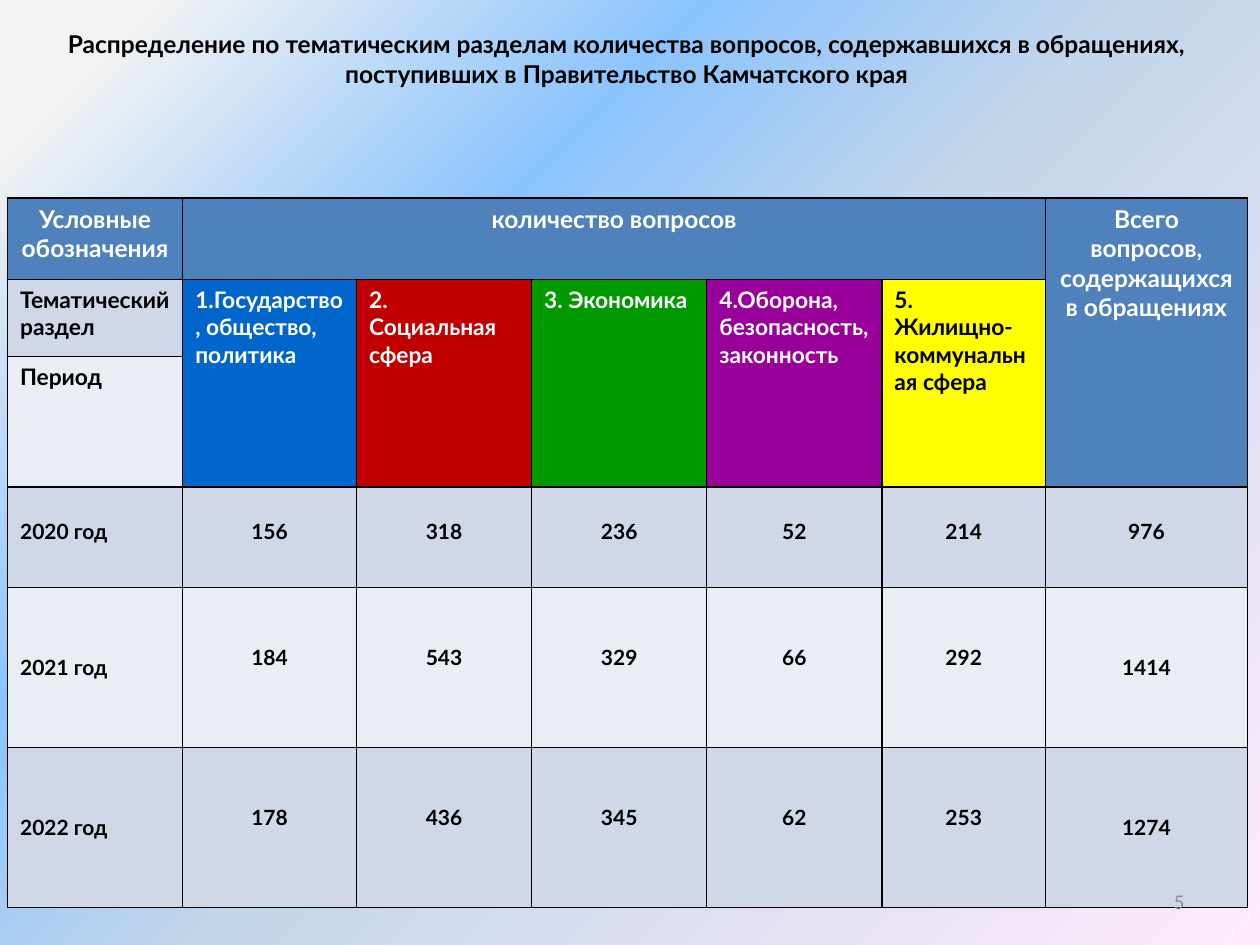
import copy
import pptx
import pptx.dml.color
import pptx.enum.text
import pptx.oxml
import pptx.oxml.ns
import pptx.util
from pptx.util import Inches

ALIGN = pptx.enum.text.PP_ALIGN
ANCHOR = pptx.enum.text.MSO_ANCHOR
COLORS = {
    "black": "000000", "white": "FFFFFF", "number": "8C8C8C",
    "header": "4F81BD", "band": "D0D8E8", "light": "E9EDF4",
    "state": "0066CC", "social": "C00000", "economy": "009900",
    "defence": "990099", "housing": "FFFF00",
}
BACKGROUND_STOPS = [(7, "F2F2F2"), (32, "8BC4FD"), (52, "C4D6EB"), (100, "FFEBFA")]


def write_text(frame, text, size=12, font="Lato", color="black", bold=True,
               align=ALIGN.LEFT, anchor=ANCHOR.TOP):
    frame.word_wrap = True
    frame.vertical_anchor = anchor
    paragraph = frame.paragraphs[0]
    paragraph.alignment = align
    run = paragraph.add_run()
    run.text = text
    run.font.size = pptx.util.Pt(size)
    run.font.name = font
    run.font.bold = bold
    run.font.color.rgb = pptx.dml.color.RGBColor.from_string(COLORS[color])


def style_cell(cell, fill):
    cell.fill.solid()
    cell.fill.fore_color.rgb = pptx.dml.color.RGBColor.from_string(COLORS[fill])
    properties = cell._tc.get_or_add_tcPr()
    for index, side in enumerate(("lnL", "lnR", "lnT", "lnB")):
        properties.insert(index, pptx.oxml.parse_xml(
            f'<a:{side} {pptx.oxml.ns.nsdecls("a")} w="12700"><a:solidFill>'
            f'<a:srgbClr val="{COLORS["black"]}"/></a:solidFill></a:{side}>'))


presentation = pptx.Presentation()
presentation.slide_width = Inches(10)
presentation.slide_height = Inches(7.5)
slide = presentation.slides.add_slide(presentation.slide_layouts[6])

background = slide.background.fill
background.gradient()
background.gradient_angle = 315
stop_list = background._fill._gradFill.gsLst
for _ in BACKGROUND_STOPS[2:]:
    stop_list.append(copy.deepcopy(stop_list[0]))
for stop, (position, color) in zip(background.gradient_stops, BACKGROUND_STOPS):
    stop.position = position / 100
    stop.color.rgb = pptx.dml.color.RGBColor.from_string(color)

title = slide.shapes.add_textbox(Inches(-0.07), Inches(-0.3), Inches(10.09), Inches(1.58))
title.text_frame.margin_bottom = Inches(0.1)
write_text(title.text_frame,
           "Распределение по тематическим разделам количества вопросов, содержавшихся "
           "в обращениях, поступивших в Правительство Камчатского края",
           size=14, align=ALIGN.CENTER, anchor=ANCHOR.MIDDLE)

column_widths = [1.39, 1.38, 1.39, 1.39, 1.39, 1.3, 1.6]
row_heights = [0.65, 0.61, 1.03, 0.8, 1.27, 1.27]
table = slide.shapes.add_table(
    len(row_heights), len(column_widths), Inches(0.06), Inches(1.57),
    Inches(sum(column_widths)), Inches(sum(row_heights))).table
for column, width in zip(table.columns, column_widths):
    column.width = Inches(width)
for row, height in zip(table.rows, row_heights):
    row.height = Inches(height)

row_fills = ["header", "band", "light", "band", "light", "band"]
section_fills = ["state", "social", "economy", "defence", "housing"]
for row_index, row_fill in enumerate(row_fills):
    for column_index in range(len(column_widths)):
        fill = row_fill
        if row_index < 3 and column_index == 6:
            fill = "header"
        elif row_index in (1, 2) and column_index > 0:
            fill = section_fills[column_index - 1]
        style_cell(table.cell(row_index, column_index), fill)

table.cell(0, 1).merge(table.cell(0, 5))
table.cell(0, 6).merge(table.cell(2, 6))
headers = {0: "Условные обозначения", 1: "количество вопросов",
           6: "Всего вопросов, содержащихся в обращениях"}
for column_index, text in headers.items():
    write_text(table.cell(0, column_index).text_frame, text,
               size=14, color="white", align=ALIGN.CENTER)

write_text(table.cell(1, 0).text_frame, "Тематический раздел", size=13)
write_text(table.cell(2, 0).text_frame, "Период", size=13)
sections = ["1.Государство, общество, политика", "2. Социальная сфера", "3. Экономика",
            "4.Оборона, безопасность, законность", "5. Жилищно-коммунальная сфера"]
for column_index, (text, fill) in enumerate(zip(sections, section_fills), start=1):
    cell = table.cell(1, column_index)
    cell.merge(table.cell(2, column_index))
    write_text(cell.text_frame, text, size=13,
               color="black" if fill == "housing" else "white")

years = [
    ["2020 год", "156", "318", "236", "52", "214", "976"],
    ["2021 год", "184", "543", "329", "66", "292", "1414"],
    ["2022 год", "178", "436", "345", "62", "253", "1274"],
]
for row_index, values in enumerate(years, start=3):
    for column_index, text in enumerate(values):
        cell = table.cell(row_index, column_index)
        if row_index > 3 and column_index in (0, 6):
            cell.vertical_anchor = ANCHOR.MIDDLE
        else:
            cell.margin_top = Inches(0.25 if row_index == 3 else 0.45)
        write_text(cell.text_frame, text, anchor=None,
                   align=ALIGN.CENTER if column_index else ALIGN.LEFT)
        if row_index > 3 and column_index in (0, 6):
            cell.vertical_anchor = ANCHOR.MIDDLE

slide_number = slide.shapes.add_textbox(Inches(7.17), Inches(6.95), Inches(2.33), Inches(0.4))
write_text(slide_number.text_frame, "5", font="Calibri", color="number", bold=False,
           align=ALIGN.RIGHT, anchor=ANCHOR.MIDDLE)

presentation.save("out.pptx")
